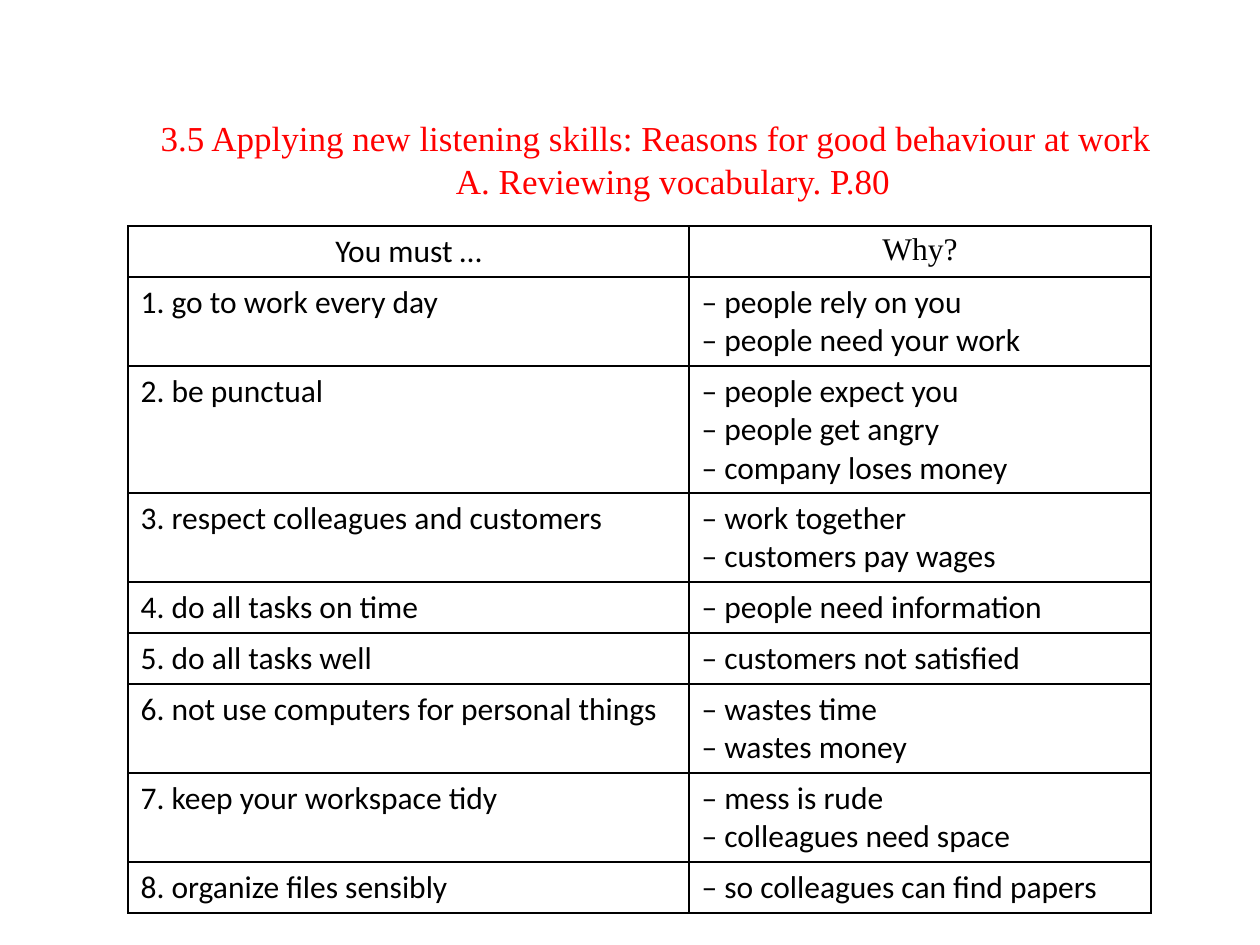
from lxml import etree
from pptx import Presentation
from pptx.dml.color import RGBColor
from pptx.enum.text import MSO_ANCHOR, PP_ALIGN
from pptx.oxml.ns import qn
from pptx.util import Emu, Pt

PX = 914400 // 126
RED = RGBColor(0xFF, 0x00, 0x00)
BLACK = RGBColor(0x00, 0x00, 0x00)
WHITE = RGBColor(0xFF, 0xFF, 0xFF)
SERIF = "Times New Roman"
SANS = "Calibri"
LEFT = PP_ALIGN.LEFT
CENTER = PP_ALIGN.CENTER
TOP = MSO_ANCHOR.TOP

TITLE_LINES = [
    ("3.5 Applying new listening skills: Reasons for good behaviour at work", 0),
    ("A. Reviewing vocabulary. P.80", 34),
]
HEADINGS = [("You must …", SANS), ("Why?", SERIF)]
RULES = [
    ("1. go to work every day", ["people rely on you", "people need your work"]),
    ("2. be punctual", ["people expect you", "people get angry", "company loses money"]),
    ("3. respect colleagues and customers", ["work together", "customers pay wages"]),
    ("4. do all tasks on time", ["people need information"]),
    ("5. do all tasks well", ["customers not satisfied"]),
    ("6. not use computers for personal things", ["wastes time", "wastes money"]),
    ("7. keep your workspace tidy", ["mess is rude", "colleagues need space"]),
    ("8. organize files sensibly", ["so colleagues can find papers"]),
]
COLUMN_WIDTHS = [561, 462]
ROW_HEIGHT = 51
LINE_HEIGHT = 38


def px(length):
    return Emu(length * PX)


def add_span(para, text, font, size, color):
    span = para.add_run()
    span.text = text
    span.font.name = font
    span.font.size = Pt(size)
    span.font.color.rgb = color


def add_title(page, left, top, width, height):
    box = page.shapes.add_textbox(px(left), px(top), px(width), px(height))
    frame = box.text_frame
    frame.word_wrap = True
    frame.vertical_anchor = TOP
    frame.margin_left = frame.margin_right = 0
    frame.margin_top = frame.margin_bottom = 0
    for index, (text, indent) in enumerate(TITLE_LINES):
        para = frame.add_paragraph() if index else frame.paragraphs[0]
        para.alignment = CENTER
        para.line_spacing = Pt(24)
        para._p.get_or_add_pPr().set("marL", str(px(indent)))
        add_span(para, text, SERIF, 20, RED)


def add_borders(cell):
    properties = cell._tc.get_or_add_tcPr()
    for position, side in enumerate(("a:lnL", "a:lnR", "a:lnT", "a:lnB")):
        line = etree.Element(qn(side), w=str(Pt(1)))
        fill = etree.SubElement(line, qn("a:solidFill"))
        etree.SubElement(fill, qn("a:srgbClr"), val=str(BLACK))
        properties.insert(position, line)


def fill_cell(cell, lines, font, alignment):
    cell.fill.solid()
    cell.fill.fore_color.rgb = WHITE
    add_borders(cell)
    for index, text in enumerate(lines):
        frame = cell.text_frame
        para = frame.add_paragraph() if index else frame.paragraphs[0]
        para.alignment = alignment
        add_span(para, text, font, 18, BLACK)


def add_rules_table(page, left, top):
    heights = [ROW_HEIGHT] + [
        ROW_HEIGHT + LINE_HEIGHT * (len(reasons) - 1) for _, reasons in RULES
    ]
    table = page.shapes.add_table(
        len(heights), len(COLUMN_WIDTHS),
        px(left), px(top), px(sum(COLUMN_WIDTHS)), px(sum(heights)),
    ).table
    for column, width in zip(table.columns, COLUMN_WIDTHS):
        column.width = px(width)
    for row, height in zip(table.rows, heights):
        row.height = px(height)
    for column, (heading, font) in enumerate(HEADINGS):
        fill_cell(table.cell(0, column), [heading], font, CENTER)
    for row, (rule, reasons) in enumerate(RULES, start=1):
        fill_cell(table.cell(row, 0), [rule], SANS, LEFT)
        fill_cell(table.cell(row, 1), [f"– {reason}" for reason in reasons], SANS, LEFT)


def main():
    deck = Presentation()
    deck.slide_width = px(1260)
    deck.slide_height = px(945)
    page = deck.slides.add_slide(deck.slide_layouts[6])
    add_title(page, 146, 117, 1020, 84)
    add_rules_table(page, 128, 226)
    deck.save("out.pptx")


if __name__ == "__main__":
    main()
